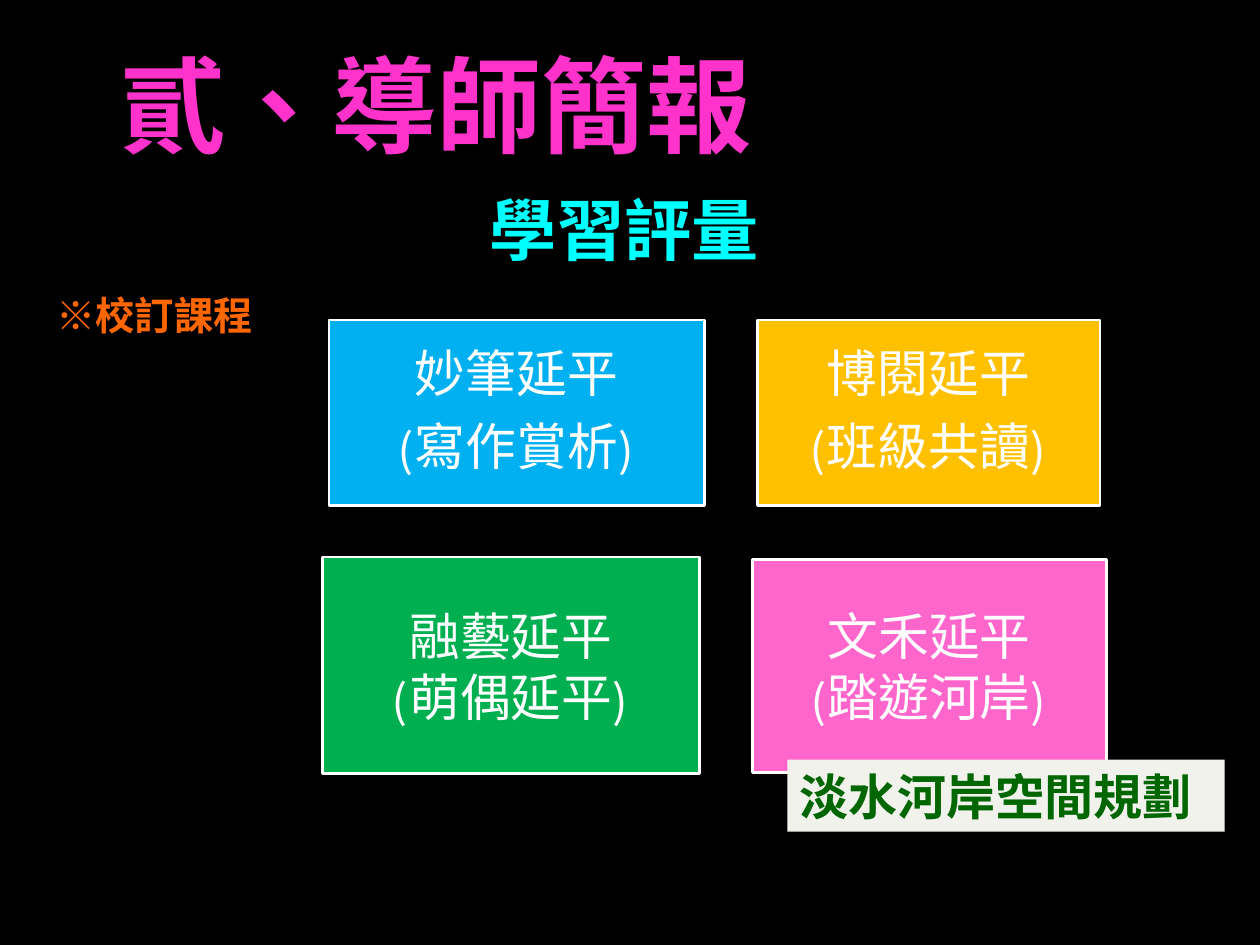
from pptx import Presentation
from pptx.dml.color import RGBColor
from pptx.enum.shapes import MSO_SHAPE
from pptx.enum.text import MSO_ANCHOR as ANCHOR, PP_ALIGN as ALIGN
from pptx.util import Inches, Pt

HEAD_FONT = "League Spartan"


def color(value):
    return RGBColor.from_string(value)


def add_line(tf, text, size, fill, font=HEAD_FONT, bold=False, small_caps=False,
             align=ALIGN.CENTER, before=0, after=0, spacing=1.0):
    """Write text as the next paragraph of tf, using the empty first one if free."""
    p = tf.paragraphs[0]
    if p.runs:
        p = tf.add_paragraph()
    p.alignment = align
    p.space_before, p.space_after = Pt(before), Pt(after)
    p.line_spacing = spacing
    r = p.add_run()
    r.text = text
    r.font.name, r.font.size, r.font.bold = font, Pt(size), bold
    r.font.color.rgb = color(fill)
    rPr = r._r.get_or_add_rPr()
    rPr.set("lang", "zh-TW")
    if small_caps:
        rPr.set("cap", "small")


class Deck:
    def __init__(self, width, height, background):
        self.prs = Presentation()
        self.prs.slide_width, self.prs.slide_height = Inches(width), Inches(height)
        self.s = self.prs.slides.add_slide(self.prs.slide_layouts[6])
        fill = self.s.background.fill
        fill.solid()
        fill.fore_color.rgb = color(background)

    def text_box(self, x, y, w, h, anchor=ANCHOR.TOP):
        tf = self.s.shapes.add_textbox(*map(Inches, (x, y, w, h))).text_frame
        tf.word_wrap = True
        tf.vertical_anchor = anchor
        return tf

    def panel(self, x, y, w, h, fill, line=None, inset=None):
        sp = self.s.shapes.add_shape(MSO_SHAPE.RECTANGLE, *map(Inches, (x, y, w, h)))
        sp.shadow.inherit = False
        sp.fill.solid()
        sp.fill.fore_color.rgb = color(fill)
        if line:
            sp.line.color.rgb = color(line)
            sp.line.width = Pt(1.5)
        else:
            sp.line.fill.background()
        tf = sp.text_frame
        tf.word_wrap = True
        tf.vertical_anchor = ANCHOR.MIDDLE
        if inset is not None:
            tf.margin_left = tf.margin_right = Inches(inset)
            tf.margin_top = tf.margin_bottom = Inches(inset)
        return tf


def main():
    deck = Deck(10, 7.5, "000000")

    title = deck.text_box(0.67, 0.06, 5.58, 1.31, ANCHOR.BOTTOM)
    add_line(title, "貳、導師簡報", 60, "FF33CC", bold=True)

    subtitle = deck.text_box(0.35, 1.31, 9.21, 2.44)
    add_line(subtitle, "學習評量", 48, "00FFFF", "Arial", bold=True, small_caps=True)
    add_line(subtitle, "※校訂課程", 28, "FF6600", "Times New Roman", bold=True,
             small_caps=True, align=ALIGN.LEFT, before=5.6)

    loose = dict(spacing=0.9, after=10)
    courses = [
        ((2.61, 2.54, 2.98, 1.47), "00B0F0", ("妙筆延平", "(寫作賞析)"), loose),
        ((6.01, 2.54, 2.72, 1.47), "FFC000", ("博閱延平", "(班級共讀)"), loose),
        ((2.56, 4.42, 2.99, 1.72), "00B050", ("融藝延平", "(萌偶延平)"), {}),
        ((5.97, 4.44, 2.81, 1.69), "FF66CC", ("文禾延平", "(踏遊河岸)"), {}),
    ]
    for place, fill, lines, gaps in courses:
        tf = deck.panel(*place, fill, line="FFFFFF", inset=0.12)
        for text in lines:
            add_line(tf, text, 29, "FFFFFF", **gaps)

    label = deck.panel(6.25, 6.03, 3.47, 0.57, "F2F2ED")
    add_line(label, "淡水河岸空間規劃", 28, "006600", "Noto Sans CJK SC", bold=True,
             align=ALIGN.JUSTIFY)

    deck.prs.save("out.pptx")


if __name__ == "__main__":
    main()
